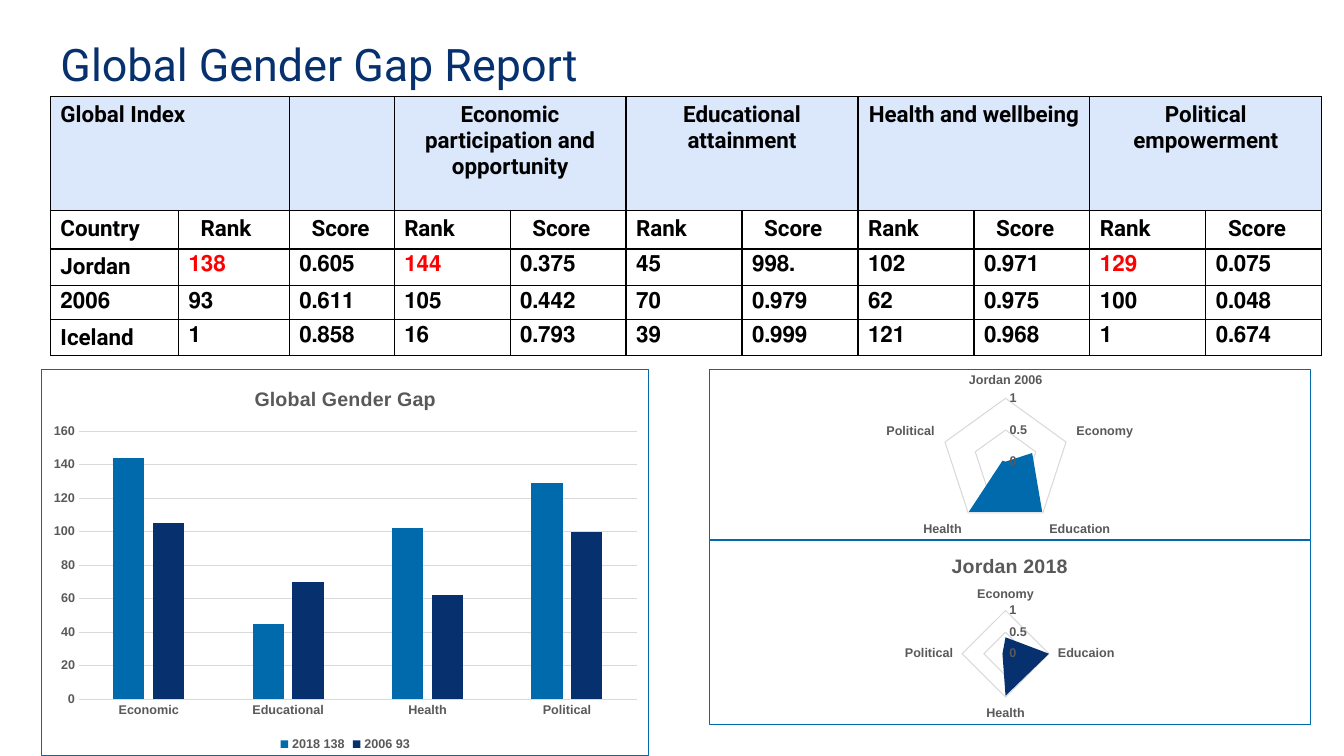
from pptx import Presentation
from pptx.chart.data import CategoryChartData
from pptx.dml.color import RGBColor
from pptx.enum.chart import XL_CHART_TYPE as ChartType, XL_LEGEND_POSITION as LegendPos
from pptx.enum.chart import XL_TICK_MARK as TickMark
from pptx.enum.text import MSO_ANCHOR, MSO_AUTO_SIZE, PP_ALIGN
from pptx.oxml import parse_xml
from pptx.util import Inches, Pt

COLORS = {"navy": "07316E", "blue": "006AAD", "header": "DBE7FA", "ink": "000000",
          "alert": "FF0000", "label": "595959", "grid": "D9D9D9"}
DRAWING = "http://schemas.openxmlformats.org/drawingml/2006/main"
CHART = "http://schemas.openxmlformats.org/drawingml/2006/chart"

DIMENSIONS = ["Economic participation and opportunity", "Educational attainment",
              "Health and wellbeing", "Political empowerment"]
COUNTRIES = [
    ["Jordan", "138", "0.605", "144", "0.375", "45", ".998", "102", "0.971", "129", "0.075"],
    ["2006", "93", "0.611", "105", "0.442", "70", "0.979", "62", "0.975", "100", "0.048"],
    ["Iceland", "1", "0.858", "16", "0.793", "39", "0.999", "121", "0.968", "1", "0.674"],
]
LOW_RANKS = {"138", "144", "129"}
COLUMN_WIDTHS = [1.27, 1.1, 1.04] + [1.15] * 8
ROW_HEIGHTS = [1.13, 0.38, 0.36, 0.34, 0.34]


def color(name):
    return RGBColor.from_string(COLORS[name])


def style_font(font, size, name, face="Arial", bold=True):
    font.size, font.name, font.bold = Pt(size), face, bold
    font.color.rgb = color(name)


def add_title(slide, box):
    title = slide.shapes.title
    title.left, title.top, title.width, title.height = map(Inches, box)
    frame = title.text_frame
    frame.auto_size = MSO_AUTO_SIZE.NONE
    frame.vertical_anchor = MSO_ANCHOR.TOP
    frame.margin_left = frame.margin_right = Inches(0.1)
    frame.margin_top = frame.margin_bottom = Inches(0.1)
    line = frame.paragraphs[0]
    line.alignment = PP_ALIGN.LEFT
    run = line.add_run()
    run.text = "Global Gender Gap Report"
    style_font(run.font, 32, "navy", "Roboto", bold=False)


def write_cell(cell, text, ink="ink", align=PP_ALIGN.LEFT, rtl=True, indent=0):
    line = cell.text_frame.paragraphs[0]
    line.alignment = align
    properties = line._p.get_or_add_pPr()
    if rtl:
        properties.set("rtl", "1")
    if indent:
        properties.set("marL", str(Inches(indent)))
    run = line.add_run()
    run.text = text
    style_font(run.font, 16, ink, "Roboto")


def frame_cell(cell, fill=None):
    """Draw the four borders of a cell, then its fill."""
    properties = cell._tc.get_or_add_tcPr()
    for side in "LRTB":
        properties.append(parse_xml(
            f'<a:ln{side} xmlns:a="{DRAWING}" w="{Pt(1)}"><a:solidFill>'
            f'<a:srgbClr val="{COLORS["ink"]}"/></a:solidFill></a:ln{side}>'))
    if fill:
        cell.fill.solid()
        cell.fill.fore_color.rgb = color(fill)
    else:
        cell.fill.background()


def add_index_table(slide, box):
    table = slide.shapes.add_table(len(ROW_HEIGHTS), len(COLUMN_WIDTHS),
                                   *map(Inches, box)).table
    table.first_row = table.horz_banding = False
    for column, width in zip(table.columns, COLUMN_WIDTHS):
        column.width = Inches(width)
    for row, height in zip(table.rows, ROW_HEIGHTS):
        row.height = Inches(height)
    for r in range(len(ROW_HEIGHTS)):
        for c in range(len(COLUMN_WIDTHS)):
            frame_cell(table.cell(r, c), "header" if r == 0 else None)

    table.cell(0, 0).merge(table.cell(0, 1))
    write_cell(table.cell(0, 0), "Global Index")
    for i, dimension in enumerate(DIMENSIONS):
        heading = table.cell(0, 3 + 2 * i)
        heading.merge(table.cell(0, 4 + 2 * i))
        write_cell(heading, dimension, align=PP_ALIGN.CENTER, rtl=False)

    for c, label in enumerate(["Country"] + ["Rank", "Score"] * 5):
        indented = label == "Score" or c == 1
        write_cell(table.cell(1, c), label, rtl=not indented, indent=0.12 if indented else 0)
    for r, values in enumerate(COUNTRIES, start=2):
        for c, value in enumerate(values):
            write_cell(table.cell(r, c), value, "alert" if value in LOW_RANKS else "ink")


def style_axis(axis, line=None):
    axis.major_tick_mark = axis.minor_tick_mark = TickMark.NONE
    style_font(axis.tick_labels.font, 9, "label")
    if line:
        axis.format.line.color.rgb = color(line)
        axis.format.line.width = Pt(0.75)
    else:
        axis.format.line.fill.background()


def style_gridlines(axis):
    grid = axis.major_gridlines.format.line
    grid.color.rgb = color("grid")
    grid.width = Pt(0.75)


def add_bordered_chart(slide, box, kind, categories, series, top, step, title=None):
    """Add a chart; series holds (name, values, colour) triples."""
    data = CategoryChartData()
    data.categories = categories
    for name, values, _ in series:
        data.add_series(name, values)
    chart = slide.shapes.add_chart(kind, *map(Inches, box), data).chart
    chart.element.chart.addnext(parse_xml(
        f'<c:spPr xmlns:c="{CHART}" xmlns:a="{DRAWING}"><a:noFill/><a:ln w="{Pt(0.75)}">'
        f'<a:solidFill><a:srgbClr val="{COLORS["blue"]}"/></a:solidFill></a:ln></c:spPr>'))
    style_font(chart.font, 10, "ink")

    chart.has_legend = False
    chart.has_title = bool(title)
    if title:
        run = chart.chart_title.text_frame.paragraphs[0].add_run()
        run.text = title
        style_font(run.font, 14, "label")

    style_axis(chart.category_axis, "grid")
    scale = chart.value_axis
    style_axis(scale)
    scale.minimum_scale, scale.maximum_scale, scale.major_unit = 0, top, step
    scale.tick_labels.number_format = "General"
    scale.tick_labels.number_format_is_linked = False
    style_gridlines(scale)

    chart.plots[0].vary_by_categories = False
    for drawn, (_, _, fill) in zip(chart.plots[0].series, series):
        drawn.format.fill.solid()
        drawn.format.fill.fore_color.rgb = color(fill)
    return chart


def add_rank_chart(slide, box):
    chart = add_bordered_chart(
        slide, box, ChartType.COLUMN_CLUSTERED,
        ["Economic", "Educational", "Health", "Political"],
        [("2018 138", (144, 45, 102, 129), "blue"), ("2006 93", (105, 70, 62, 100), "navy")],
        160, 20, "Global Gender Gap")
    chart.plots[0].gap_width, chart.plots[0].overlap = 219, -27
    chart.has_legend = True
    chart.legend.position = LegendPos.BOTTOM
    chart.legend.include_in_layout = False
    style_font(chart.legend.font, 9, "label")


def add_score_radar(slide, box, categories, series, title=None):
    chart = add_bordered_chart(slide, box, ChartType.RADAR_FILLED, categories,
                               [series], 1, 0.5, title)
    style_gridlines(chart.category_axis)


def main():
    deck = Presentation()
    deck.slide_width, deck.slide_height = Inches(13.33), Inches(7.5)
    slide = deck.slides.add_slide(deck.slide_layouts[5])
    add_title(slide, (0.5, 0.26, 9, 0.67))
    add_index_table(slide, (0.5, 0.96, sum(COLUMN_WIDTHS), sum(ROW_HEIGHTS)))
    add_rank_chart(slide, (0.41, 3.66, 6.03, 3.84))
    add_score_radar(slide, (7.03, 3.66, 5.97, 1.7),
                    ["Jordan 2006", "Economy", "Education", "Health", "Political"],
                    ("Series 1", (None, 0.44, 0.98, 0.98, 0.05), "blue"))
    add_score_radar(slide, (7.03, 5.36, 5.97, 1.83),
                    ["Economy", "Educaion", "Health", "Political"],
                    ("Jordan 2018", (0.38, 1, 0.97, 0.07), "navy"), "Jordan 2018")
    deck.save("out.pptx")


if __name__ == "__main__":
    main()
